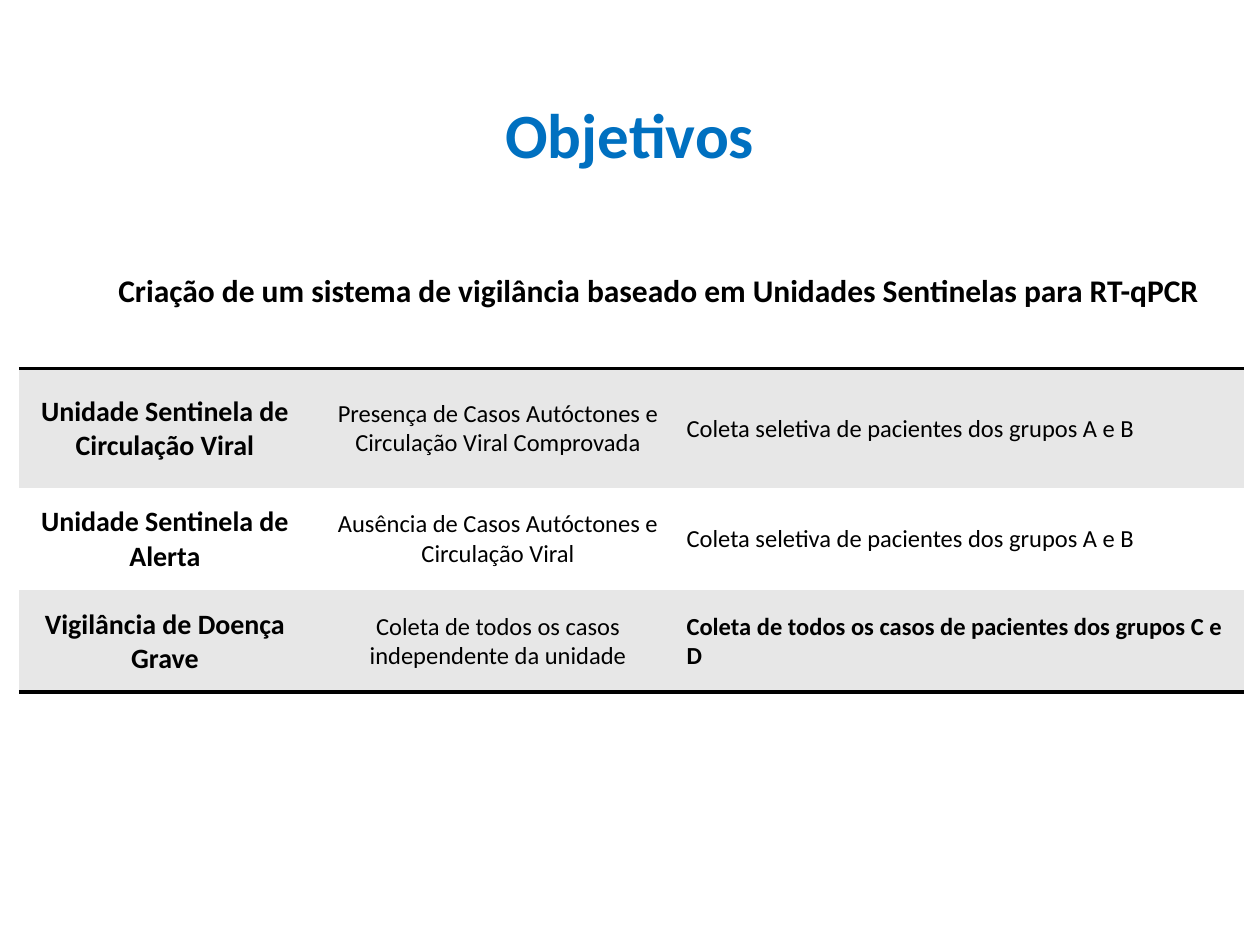
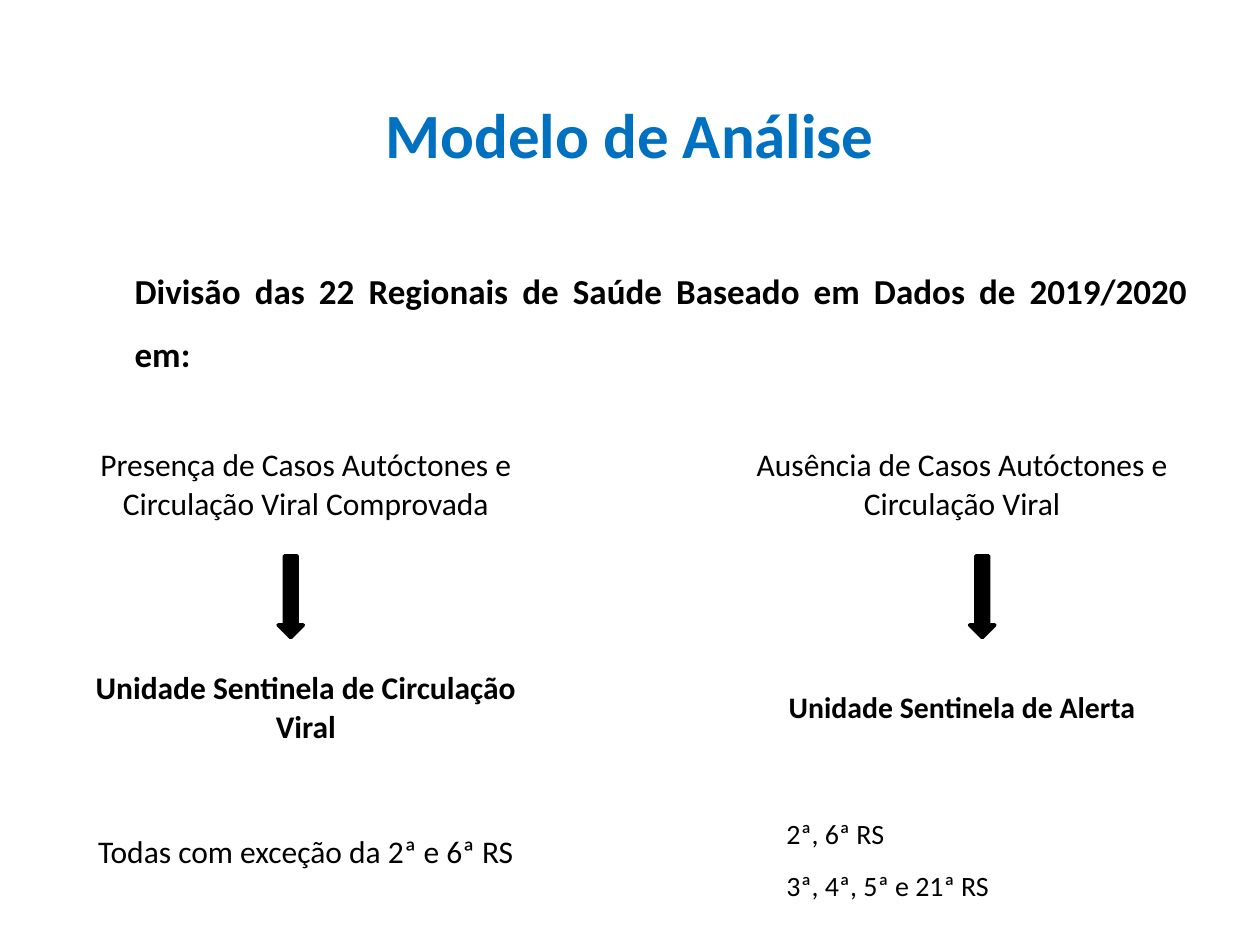
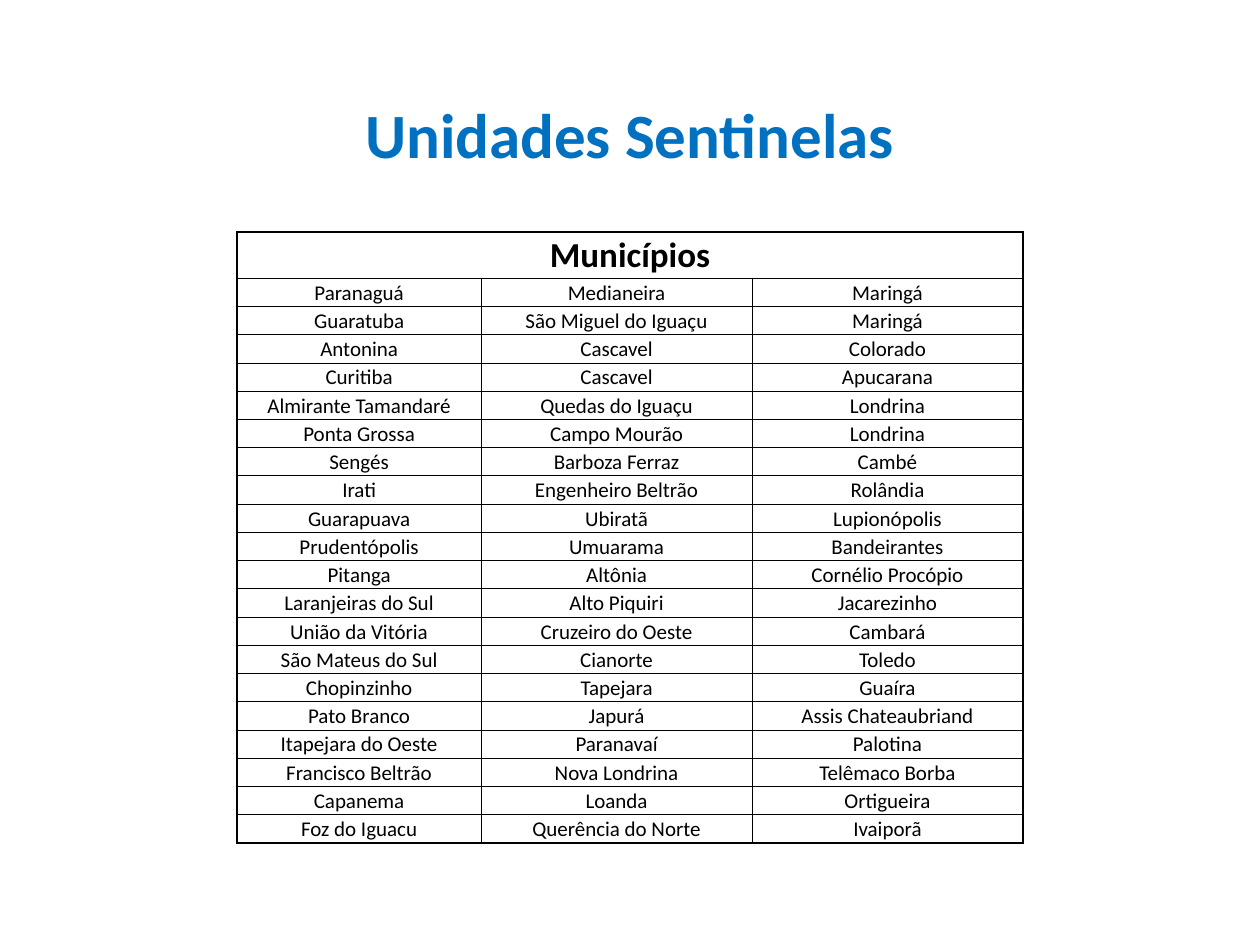
from collections import namedtuple

from lxml import etree
from pptx import Presentation
from pptx import util as u
from pptx.dml.color import RGBColor
from pptx.enum import shapes, text
from pptx.oxml import ns

Box = namedtuple("Box", "left top width height")

FONT = "Calibri"
BLACK, WHITE, GREY, BLUE = "000000", "FFFFFF", "E7E7E7", "0070C0"
LEFT, CENTER, JUSTIFY = text.PP_ALIGN.LEFT, text.PP_ALIGN.CENTER, text.PP_ALIGN.JUSTIFY
TITLE_AND_BODY, TITLE_ONLY = 1, 5
TITLE_BOX = Box(1.19, 1.8, 23.01, 1.78)
PLAIN_TABLE = "{2D5ABB26-0587-4C30-8999-92F81FD0307C}"

SURVEILLANCE = [
    ("Unidade Sentinela de Circulação Viral",
     "Presença de Casos Autóctones e Circulação Viral Comprovada",
     "Coleta seletiva de pacientes dos grupos A e B"),
    ("Unidade Sentinela de Alerta",
     "Ausência de Casos Autóctones e Circulação Viral",
     "Coleta seletiva de pacientes dos grupos A e B"),
    ("Vigilância de Doença Grave",
     "Coleta de todos os casos independente da unidade",
     "Coleta de todos os casos de pacientes dos grupos C e D"),
]

MUNICIPALITIES = [
    ("Paranaguá", "Medianeira", "Maringá"),
    ("Guaratuba", "São Miguel do Iguaçu", "Maringá"),
    ("Antonina", "Cascavel", "Colorado"),
    ("Curitiba", "Cascavel", "Apucarana"),
    ("Almirante Tamandaré", "Quedas do Iguaçu", "Londrina"),
    ("Ponta Grossa", "Campo Mourão", "Londrina"),
    ("Sengés", "Barboza Ferraz", "Cambé"),
    ("Irati", "Engenheiro Beltrão", "Rolândia"),
    ("Guarapuava", "Ubiratã", "Lupionópolis"),
    ("Prudentópolis", "Umuarama", "Bandeirantes"),
    ("Pitanga", "Altônia", "Cornélio Procópio"),
    ("Laranjeiras do Sul", "Alto Piquiri", "Jacarezinho"),
    ("União da Vitória", "Cruzeiro do Oeste", "Cambará"),
    ("São Mateus do Sul", "Cianorte", "Toledo"),
    ("Chopinzinho", "Tapejara", "Guaíra"),
    ("Pato Branco", "Japurá", "Assis Chateaubriand"),
    ("Itapejara do Oeste", "Paranavaí", "Palotina"),
    ("Francisco Beltrão", "Nova Londrina", "Telêmaco Borba"),
    ("Capanema", "Loanda", "Ortigueira"),
    ("Foz do Iguacu", "Querência do Norte", "Ivaiporã"),
]


def rgb(code):
    return RGBColor.from_string(code)


def write(frame, content, size=18, color=BLACK, bold=False, align=LEFT, spacing=1.0, indent=0):
    frame.word_wrap = True
    for number, line in enumerate(content.split("\n")):
        paragraph = frame.add_paragraph() if number else frame.paragraphs[0]
        properties = paragraph._p.get_or_add_pPr()
        properties.set("marL", str(u.Cm(indent)))
        properties.set("indent", "0")
        etree.SubElement(properties, ns.qn("a:buNone"))
        paragraph.alignment = align
        paragraph.line_spacing = spacing
        paragraph.space_before = u.Pt(0)
        run = paragraph.add_run()
        run.text = line
        run.font.name = FONT
        run.font.size = u.Pt(size)
        run.font.bold = bold
        run.font.color.rgb = rgb(color)


def fill_placeholder(placeholder, box, content, **style):
    placeholder.left, placeholder.top, placeholder.width, placeholder.height = map(u.Cm, box)
    placeholder.text_frame.auto_size = text.MSO_AUTO_SIZE.NONE
    write(placeholder.text_frame, content, **style)


def titled_slide(deck, layout, title):
    slide = deck.slides.add_slide(deck.slide_layouts[layout])
    fill_placeholder(slide.shapes.title, TITLE_BOX, title,
                     size=36, color=BLUE, bold=True, align=CENTER)
    return slide


def add_grid(slide, box, widths, heights):
    table = slide.shapes.add_table(len(heights), len(widths), *map(u.Cm, box)).table
    table.first_row = table.horz_banding = False
    table._tbl.tblPr.find(ns.qn("a:tableStyleId")).text = PLAIN_TABLE
    for column, width in zip(table.columns, widths):
        column.width = u.Cm(width)
    for row, height in zip(table.rows, heights):
        row.height = u.Cm(height)
    return table


def set_borders(cell, borders):
    properties = cell._tc.get_or_add_tcPr()
    for side in "LRTB":
        if side in borders:
            line = etree.SubElement(properties, ns.qn(f"a:ln{side}"), w=str(u.Pt(borders[side])))
            solid = etree.SubElement(line, ns.qn("a:solidFill"))
            etree.SubElement(solid, ns.qn("a:srgbClr"), val=BLACK)


def fill_cell(cell, content, fill=None, borders=None, inset=0.03, **style):
    cell.vertical_anchor = text.MSO_ANCHOR.MIDDLE
    cell.margin_left = cell.margin_right = cell.margin_top = u.Cm(inset)
    cell.margin_bottom = 0
    set_borders(cell, borders or {})
    if fill:
        cell.fill.solid()
        cell.fill.fore_color.rgb = rgb(fill)
    else:
        cell.fill.background()
    write(cell.text_frame, content, **style)


def surveillance_table(slide, box):
    last = len(SURVEILLANCE) - 1
    table = add_grid(slide, box, (5.89, 7.54, 11.27), (2.41, 2.06, 2.06))
    for r, row in enumerate(SURVEILLANCE):
        borders = {0: {"T": 2}, last: {"B": 2}}.get(r)
        for c, content in enumerate(row):
            fill_cell(table.cell(r, c), content, GREY if r % 2 == 0 else WHITE, borders,
                      size=14 if c else 16, bold=c == 0 or (r, c) == (last, 2),
                      align=LEFT if c == 2 else CENTER)


def down_arrow(slide, center_x, center_y, length=1.65, thickness=0.51):
    arrow = slide.shapes.add_shape(
        shapes.MSO_SHAPE.RIGHT_ARROW, u.Cm(center_x - length / 2),
        u.Cm(center_y - thickness / 2), u.Cm(length), u.Cm(thickness))
    arrow.rotation = 90
    arrow.shadow.inherit = False
    arrow.fill.solid()
    arrow.fill.fore_color.rgb = rgb(BLACK)
    arrow.line.color.rgb = rgb(BLACK)
    arrow.line.width = u.Pt(2)


def analysis_branches(slide, box):
    heights = (2.9, 1.6, 2.9, 2.9)
    table = add_grid(slide, box, (9.63, 3.6, 9.63), heights)
    branches = {
        (0, 0): ("Presença de Casos Autóctones e Circulação Viral Comprovada", {}),
        (0, 2): ("Ausência de Casos Autóctones e Circulação Viral", {}),
        (2, 0): ("Unidade Sentinela de Circulação Viral", {"bold": True}),
        (2, 2): ("Unidade Sentinela de Alerta", {"bold": True, "size": 17}),
        (3, 0): ("Todas com exceção da 2ª e 6ª RS", {}),
        (3, 2): ("2ª, 6ª RS\n3ª, 4ª, 5ª e 21ª RS",
                 {"size": 16, "align": JUSTIFY, "spacing": 1.5, "indent": 1.27}),
    }
    for (r, c), (content, style) in branches.items():
        fill_cell(table.cell(r, c), content, inset=0, **{"align": CENTER, **style})
    for offset in (18.45, 4.51):
        down_arrow(slide, box.left + offset, box.top + heights[0] + heights[1] / 2)


def municipality_table(slide, box):
    count = len(MUNICIPALITIES)
    table = add_grid(slide, box, (4.92, 5.46, 5.46), [0.93] + [0.57] * count)
    table.cell(0, 0).merge(table.cell(0, 2))
    for c in range(3):
        fill_cell(table.cell(0, c), "Municípios" if c == 0 else "", WHITE,
                  dict.fromkeys("LRTB", 1), size=20, bold=True, align=CENTER)
    for r, row in enumerate(MUNICIPALITIES, 1):
        for c, name in enumerate(row):
            borders = {"L": 1 if c == 0 else 0.5, "R": 1 if c == 2 else 0.5,
                       "T": 1 if r == 1 else 0.5, "B": 1 if r == count else 0.5}
            fill_cell(table.cell(r, c), name, WHITE, borders, size=12, align=CENTER)


def objectives_slide(deck):
    slide = titled_slide(deck, TITLE_AND_BODY, "Objetivos")
    fill_placeholder(
        slide.placeholders[1], Box(2.13, 4.95, 23.2, 1.42),
        "Criação de um sistema de vigilância baseado em Unidades Sentinelas para RT-qPCR",
        bold=True, spacing=1.5)
    surveillance_table(slide, Box(0.38, 7.42, 24.7, 6.53))


def analysis_slide(deck):
    slide = titled_slide(deck, TITLE_AND_BODY, "Modelo de Análise")
    fill_placeholder(
        slide.placeholders[1], Box(2.46, 4.89, 21.74, 2.9),
        "Divisão das 22 Regionais de Saúde Baseado em Dados de 2019/2020 em:",
        size=20, bold=True, align=JUSTIFY, spacing=1.5)
    analysis_branches(slide, Box(1.35, 8.33, 22.86, 10.3))


def units_slide(deck):
    slide = titled_slide(deck, TITLE_ONLY, "Unidades Sentinelas")
    municipality_table(slide, Box(4.78, 4.68, 15.84, 12.33))


def main():
    deck = Presentation()
    deck.slide_width, deck.slide_height = u.Cm(25.4), u.Cm(19.05)
    objectives_slide(deck)
    analysis_slide(deck)
    units_slide(deck)
    deck.save("out.pptx")


if __name__ == "__main__":
    main()
